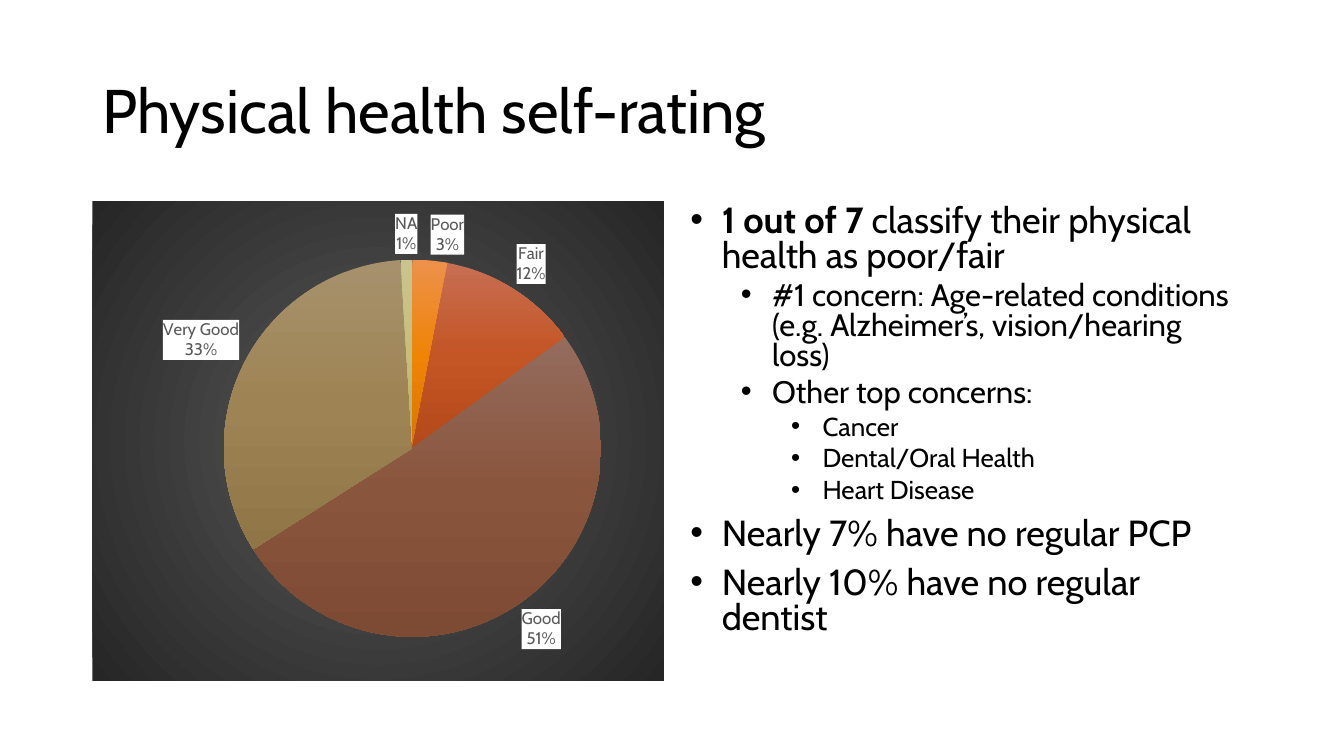
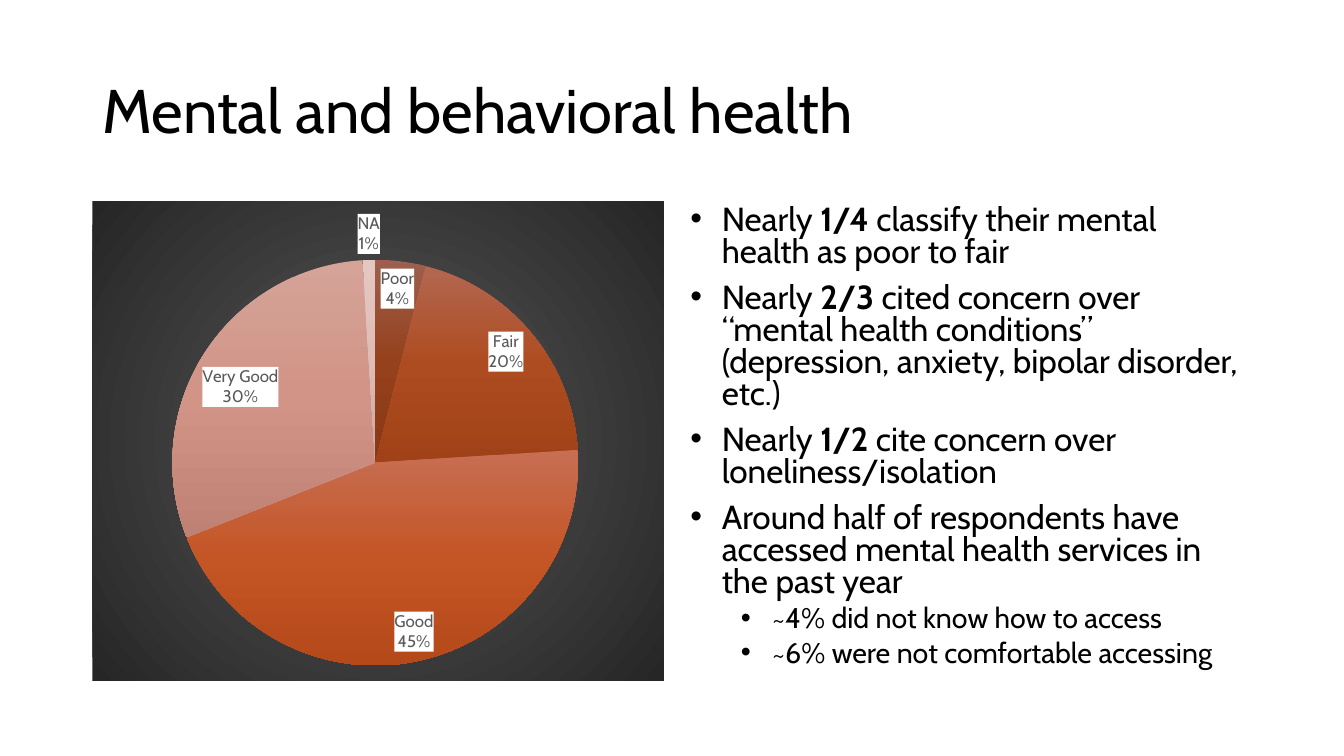
from lxml.etree import SubElement
from pptx import Presentation
from pptx.chart.data import CategoryChartData
from pptx.dml.color import RGBColor
from pptx.enum.chart import XL_CHART_TYPE, XL_LABEL_POSITION
from pptx.enum.text import MSO_ANCHOR
from pptx.oxml import parse_xml
from pptx.oxml.ns import nsdecls, qn
from pptx.util import Cm, Pt

FONT = "Cabin"
BLACK, GREY = "000000", "595959"
BACKDROP = ("595959", "262626")
RATINGS = ("Poor", "Fair", "Good", "Very Good", "NA")
LEFT, TOP, WIDTH, HEIGHT = Cm(2.33), Cm(5.07), Cm(14.4), Cm(12.09)
TEXT_LEFT = Cm(17.15)
HANG = Cm(0.79)
LEVEL_STEP = Cm(1.27)

# Bullets are (level, text); text between ** marks is bold.
# Plot is the left, top, width and height of the pie as shares of the chart.
SLIDES = [
    {
        "title": "Physical health self-rating",
        "values": (3, 12, 51, 33, 1),
        "gradients": (
            ("ED914C", "EF8407", "DB7600"),
            ("C76E53", "C45525", "B5491A"),
            ("946C5D", "8A553D", "7D4A33"),
            ("A7916D", "9E8454", "907647"),
            ("C9C48F", "C5BF7D", "B3AD6B"),
        ),
        "plot": (0.23, 0.12, 0.66, 0.79),
        "label_position": XL_LABEL_POSITION.OUTSIDE_END,
        "sizes": (25.9, 22.2, 18.5),
        "bullets": (
            (0, "**1 out of 7 **classify their physical health as poor/fair"),
            (1, "#1 concern: Age-related conditions (e.g. Alzheimer’s, vision/hearing loss)"),
            (1, "Other top concerns:"),
            (2, "Cancer"),
            (2, "Dental/Oral Health"),
            (2, "Heart Disease"),
            (0, "Nearly 7% have no regular PCP"),
            (0, "Nearly 10% have no regular dentist"),
        ),
    },
    {
        "title": "Mental and behavioral health",
        "values": (4, 20, 45, 30, 1),
        "gradients": (
            ("9D5F4F", "95411C", "893714"),
            ("B36751", "AE4C21", "A04117"),
            ("C76E53", "C45525", "B5491A"),
            ("D5A398", "D29487", "BF8173"),
            ("E4C7C1", "E0BCB6", "CAA69F"),
        ),
        "plot": (0.14, 0.12, 0.71, 0.85),
        "label_position": XL_LABEL_POSITION.BEST_FIT,
        "sizes": (23.8, 20.4),
        "bullets": (
            (0, "Nearly** 1/4** classify their mental health as poor to fair"),
            (0, "Nearly **2/3** cited concern over “mental health conditions” "
                "(depression, anxiety, bipolar disorder, etc.)"),
            (0, "Nearly **1/2** cite concern over loneliness/isolation"),
            (0, "Around half of respondents have accessed mental health services in the past year"),
            (1, "~4% did not know how to access"),
            (1, "~6% were not comfortable accessing"),
        ),
    },
]


def set_font(font, size, color):
    font.name = FONT
    font.size = Pt(size)
    font.color.rgb = RGBColor.from_string(color)


def gradient(colors, direction):
    """Return a gradFill with evenly spaced stops and the given direction XML."""
    step = 100000 // (len(colors) - 1)
    stops = "".join(
        f'<a:gs pos="{i * step}"><a:srgbClr val="{color}"/></a:gs>'
        for i, color in enumerate(colors)
    )
    return parse_xml(f'<a:gradFill {nsdecls("a")}><a:gsLst>{stops}</a:gsLst>{direction}</a:gradFill>')


prs = Presentation()
prs.slide_width, prs.slide_height = Cm(33.87), Cm(19.05)

for content in SLIDES:
    s = prs.slides.add_slide(prs.slide_layouts[6])

    # Title
    tf = s.shapes.add_textbox(LEFT, Cm(1.01), Cm(29.21), Cm(3.68)).text_frame
    tf.word_wrap = True
    tf.vertical_anchor = MSO_ANCHOR.MIDDLE
    p = tf.paragraphs[0]
    p.text = content["title"]
    p.line_spacing = 0.9
    set_font(p.font, 44, BLACK)

    # Pie chart
    data = CategoryChartData()
    data.categories = RATINGS
    data.add_series("Series 1", content["values"])
    chart = s.shapes.add_chart(XL_CHART_TYPE.PIE, LEFT, TOP, WIDTH, HEIGHT, data).chart
    chart.has_title = False
    chart.has_legend = False
    set_font(chart.font, 10, BLACK)

    backdrop = parse_xml(f'<c:spPr {nsdecls("c", "a")}><a:ln><a:noFill/></a:ln></c:spPr>')
    backdrop.insert(0, gradient(
        BACKDROP,
        '<a:path path="circle"><a:fillToRect l="50000" t="50000" r="50000" b="50000"/></a:path>',
    ))
    chart_xml = chart._chartSpace.find(qn("c:chart"))
    chart_xml.addnext(backdrop)

    plot_area = chart_xml.find(qn("c:plotArea"))
    for layout in plot_area.findall(qn("c:layout")):
        plot_area.remove(layout)
    layout = parse_xml(f'<c:layout {nsdecls("c")}><c:manualLayout/></c:layout>')
    plot_area.insert(0, layout)
    settings = [("layoutTarget", "inner"), ("xMode", "edge"), ("yMode", "edge")]
    settings += zip("xywh", content["plot"])
    for tag, value in settings:
        SubElement(layout[0], qn(f"c:{tag}")).set("val", str(value))

    plot = chart.plots[0]
    plot.vary_by_categories = True
    series = plot.series[0]
    for i, colors in enumerate(content["gradients"]):
        series.points[i].format.fill.gradient()
        old = series._element.findall(qn("c:dPt"))[i].find(".//" + qn("a:gradFill"))
        old.getparent().replace(old, gradient(colors, '<a:lin ang="5400000" scaled="0"/>'))

    labels = series.data_labels
    labels.show_value = False
    labels.show_category_name = True
    labels.show_percentage = True
    labels.number_format = "0%"
    labels.number_format_is_linked = False
    labels.position = content["label_position"]
    set_font(labels.font, 12, GREY)
    labels_xml = labels._element
    labels_xml.find(qn("c:txPr")).addprevious(parse_xml(
        f'<c:spPr {nsdecls("c", "a")}><a:solidFill><a:srgbClr val="FFFFFF"/></a:solidFill></c:spPr>'
    ))
    separator = parse_xml(f'<c:separator {nsdecls("c")}>\n</c:separator>')
    labels_xml.find(qn("c:showPercent")).addnext(separator)
    bubble = labels_xml.find(qn("c:showBubbleSize"))
    if bubble is not None:
        bubble.addnext(separator)

    # Bullets
    tf = s.shapes.add_textbox(TEXT_LEFT, TOP, WIDTH, HEIGHT).text_frame
    tf.word_wrap = True
    for i, (level, text) in enumerate(content["bullets"]):
        p = tf.add_paragraph() if i else tf.paragraphs[0]
        p.level = level
        p.line_spacing = 0.8
        p.space_before = Pt(5 if level else 10)
        set_font(p.font, content["sizes"][level], BLACK)
        pPr = p._p.get_or_add_pPr()
        pPr.set("marL", str(HANG + level * LEVEL_STEP))
        pPr.set("indent", str(-HANG))
        bullet = [
            parse_xml(f'<a:buFont {nsdecls("a")} typeface="Arial"/>'),
            parse_xml(f'<a:buChar {nsdecls("a")} char="•"/>'),
        ]
        for element in bullet:
            pPr.find(qn("a:defRPr")).addprevious(element)
        for j, part in enumerate(text.split("**")):
            if part:
                r = p.add_run()
                r.text = part
                if j % 2:
                    r.font.bold = True

prs.save("out.pptx")
